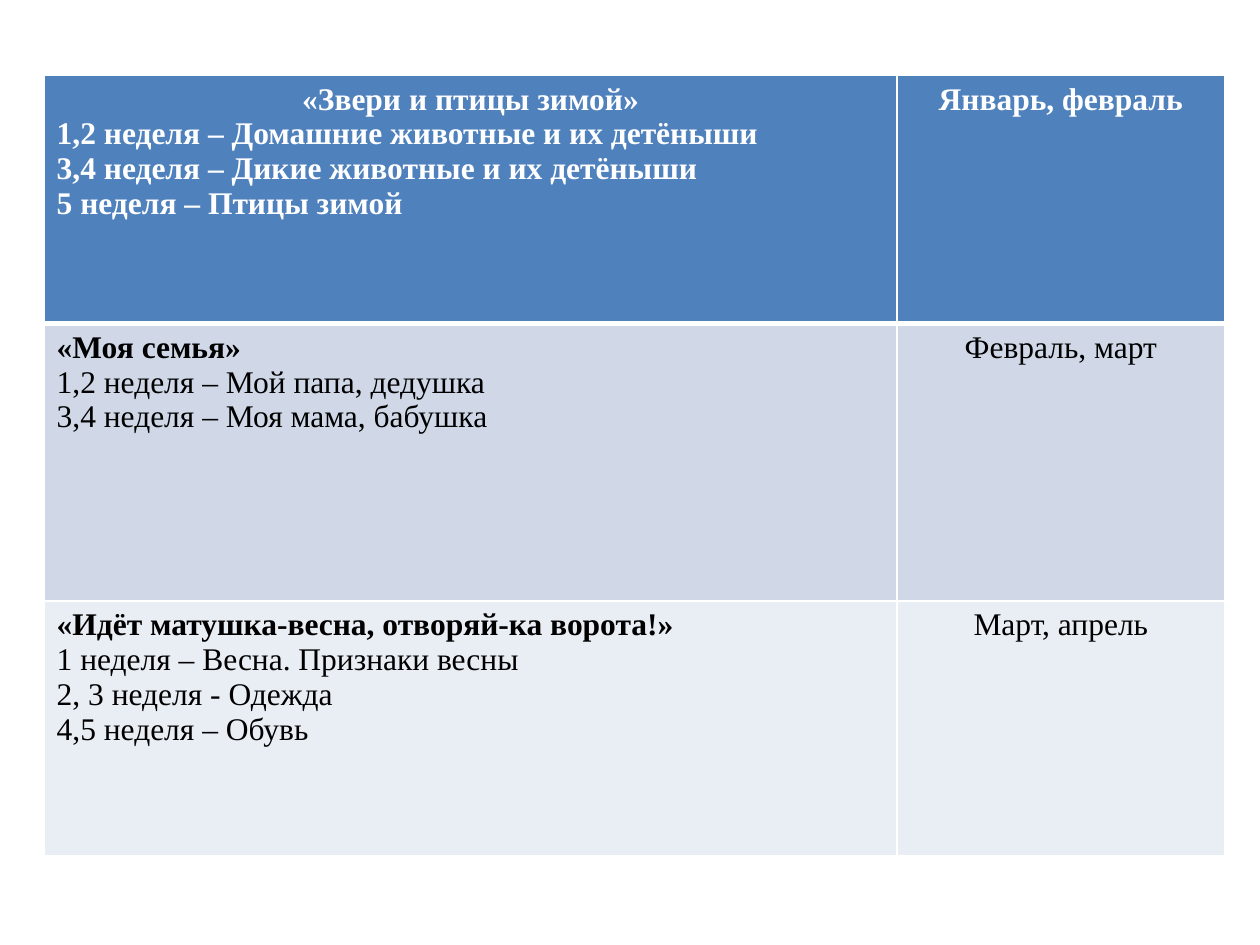
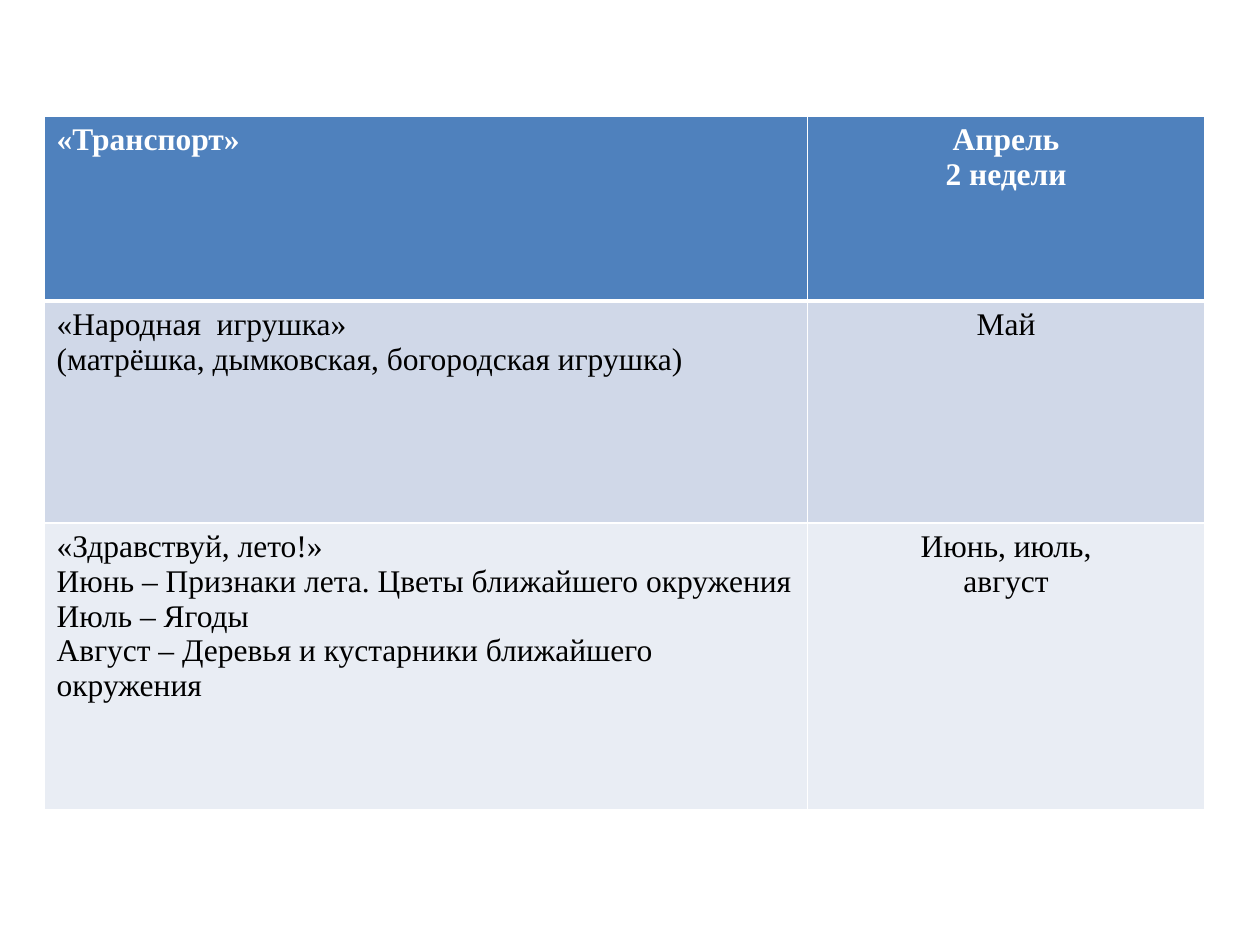
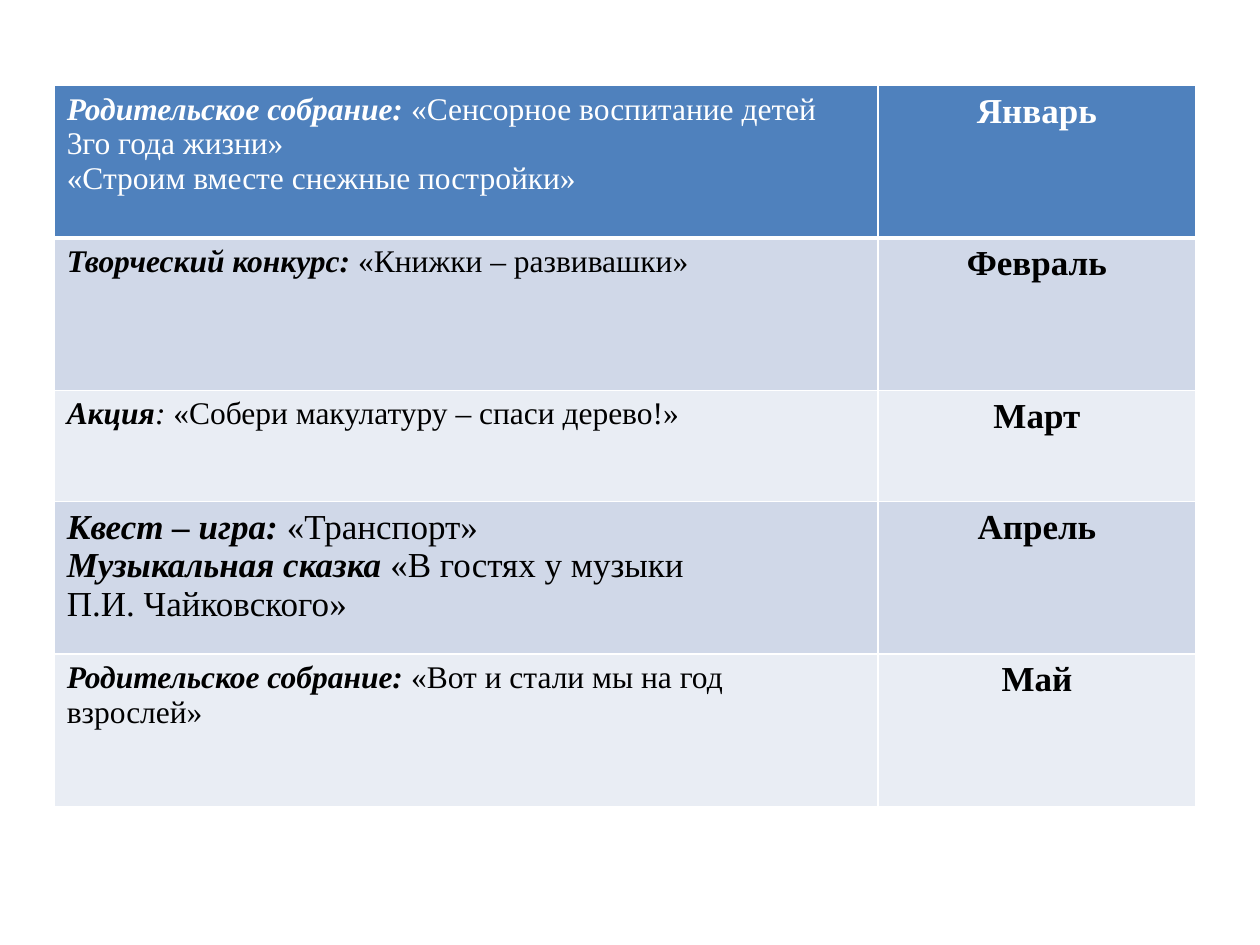
from lxml.etree import SubElement
from pptx import Presentation
from pptx.dml.color import RGBColor
from pptx.enum.text import PP_ALIGN
from pptx.oxml.ns import qn
from pptx.util import Inches, Pt

COLORS = {
    "header": "4F81BD",
    "odd_row": "D0D8E8",
    "even_row": "E9EDF4",
    "border": "FFFFFF",
    "header_text": "FFFFFF",
    "body_text": "000000",
}
FONT = "Times New Roman"
TEXT_SIZE, LARGE_SIZE = 18, 20
BORDER, HEADER_RULE = 1, 3


def line(*runs, centered=False, size=TEXT_SIZE):
    """One paragraph; each run is plain text or a (text, "b"/"i"/"bi") pair."""
    pairs = [(run, "") if isinstance(run, str) else run for run in runs]
    return {"runs": pairs, "centered": centered, "size": size}


def plain(*texts):
    return [line(text) for text in texts]


def bold(*texts):
    return [line((text, "b")) for text in texts]


def centered(*texts, style="", size=TEXT_SIZE):
    return [line((text, style), centered=True, size=size) for text in texts]


def month(name):
    return centered(name, style="b", size=LARGE_SIZE)


def event(kind, subject, size=TEXT_SIZE):
    return line((kind, "bi"), subject, size=size)


def write_cell(cell, lines, color):
    frame = cell.text_frame
    for index, content in enumerate(lines):
        paragraph = frame.add_paragraph() if index else frame.paragraphs[0]
        paragraph.alignment = PP_ALIGN.CENTER if content["centered"] else PP_ALIGN.LEFT
        for text, style in content["runs"]:
            run = paragraph.add_run()
            run.text = text
            font_format = {
                "name": FONT,
                "size": Pt(content["size"]),
                "bold": "b" in style,
                "italic": "i" in style,
            }
            for attribute, value in font_format.items():
                setattr(run.font, attribute, value)
            run.font.color.rgb = RGBColor.from_string(color)


def set_borders(cell, top, bottom):
    properties = cell._tc.get_or_add_tcPr()
    widths = {"a:lnL": BORDER, "a:lnR": BORDER, "a:lnT": top, "a:lnB": bottom}
    for tag, width in widths.items():
        edge = SubElement(properties, qn(tag), w=str(Pt(width)))
        fill = SubElement(edge, qn("a:solidFill"))
        SubElement(fill, qn("a:srgbClr"), val=COLORS["border"])


def add_plan(presentation, left, top, widths, heights, rows):
    """Add a slide with a table of topics and their months."""
    slide = presentation.slides.add_slide(presentation.slide_layouts[6])
    plan = slide.shapes.add_table(
        len(rows), len(widths), Inches(left), Inches(top),
        Inches(sum(widths)), Inches(sum(heights)),
    ).table
    for column, width in zip(plan.columns, widths):
        column.width = Inches(width)
    for index, (row, height, contents) in enumerate(zip(plan.rows, heights, rows)):
        row.height = Inches(height)
        if index == 0:
            band, text_color = "header", "header_text"
        else:
            band, text_color = ("odd_row" if index % 2 else "even_row"), "body_text"
        for cell, lines in zip(row.cells, contents):
            set_borders(
                cell,
                top=HEADER_RULE if index == 1 else BORDER,
                bottom=HEADER_RULE if index == 0 else BORDER,
            )
            cell.fill.solid()
            cell.fill.fore_color.rgb = RGBColor.from_string(COLORS[band])
            write_cell(cell, lines, COLORS[text_color])


def main():
    presentation = Presentation()
    presentation.slide_width = Inches(10)
    presentation.slide_height = Inches(7.5)

    winter_to_spring = [
        (
            centered("«Звери и птицы зимой»", style="b")
            + bold(
                "1,2 неделя – Домашние животные и их детёныши",
                "3,4 неделя – Дикие животные и их детёныши",
                "5 неделя – Птицы зимой",
            ),
            centered("Январь, февраль", style="b"),
        ),
        (
            bold("«Моя семья»")
            + plain("1,2 неделя – Мой папа, дедушка", "3,4 неделя – Моя мама, бабушка"),
            centered("Февраль, март"),
        ),
        (
            bold("«Идёт матушка-весна, отворяй-ка ворота!»")
            + plain(
                "1 неделя – Весна. Признаки весны",
                "2, 3 неделя - Одежда",
                "4,5 неделя – Обувь",
            ),
            centered("Март, апрель"),
        ),
    ]
    spring_to_summer = [
        (bold("«Транспорт»"), centered("Апрель", "2 недели", style="b")),
        (
            plain("«Народная  игрушка»", "(матрёшка, дымковская, богородская игрушка)"),
            centered("Май"),
        ),
        (
            plain(
                "«Здравствуй, лето!»",
                "Июнь – Признаки лета. Цветы ближайшего окружения",
                "Июль – Ягоды",
                "Август – Деревья и кустарники ближайшего окружения",
            ),
            centered("Июнь, июль,", "август"),
        ),
    ]
    family_events = [
        (
            [
                event("Родительское собрание: ", "«Сенсорное воспитание детей 3го года жизни»"),
                line("«Строим вместе снежные постройки»"),
            ],
            month("Январь"),
        ),
        ([event("Творческий конкурс:", " «Книжки – развивашки»")], month("Февраль")),
        (
            [line(("Акция", "bi"), (": ", "i"), "«Собери макулатуру – спаси дерево!»")],
            month("Март"),
        ),
        (
            [
                event("Квест – игра: ", "«Транспорт»", LARGE_SIZE),
                event("Музыкальная сказка ", "«В гостях у музыки", LARGE_SIZE),
                line("П.И. Чайковского»", size=LARGE_SIZE),
            ],
            month("Апрель"),
        ),
        (
            [event("Родительское собрание: ", "«Вот и стали мы на год взрослей»")],
            month("Май"),
        ),
    ]

    add_plan(presentation, 0.35, 0.6, [6.77, 2.6], [1.97, 2.2, 2.02], winter_to_spring)
    add_plan(presentation, 0.35, 0.92, [6.06, 3.15], [1.47, 1.76, 2.28], spring_to_summer)
    add_plan(
        presentation, 0.43, 0.68, [6.54, 2.52], [1.21, 1.21, 0.88, 1.21, 1.21], family_events
    )
    presentation.save("out.pptx")


if __name__ == "__main__":
    main()
